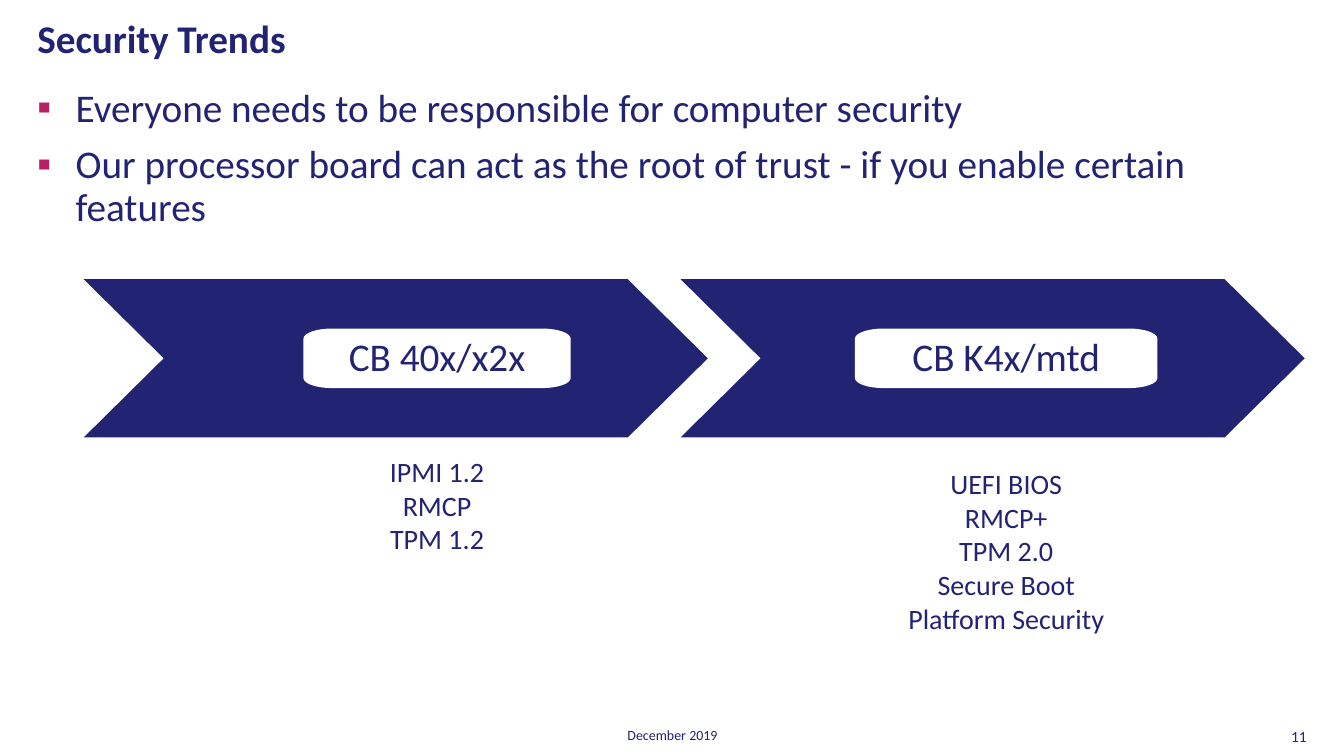
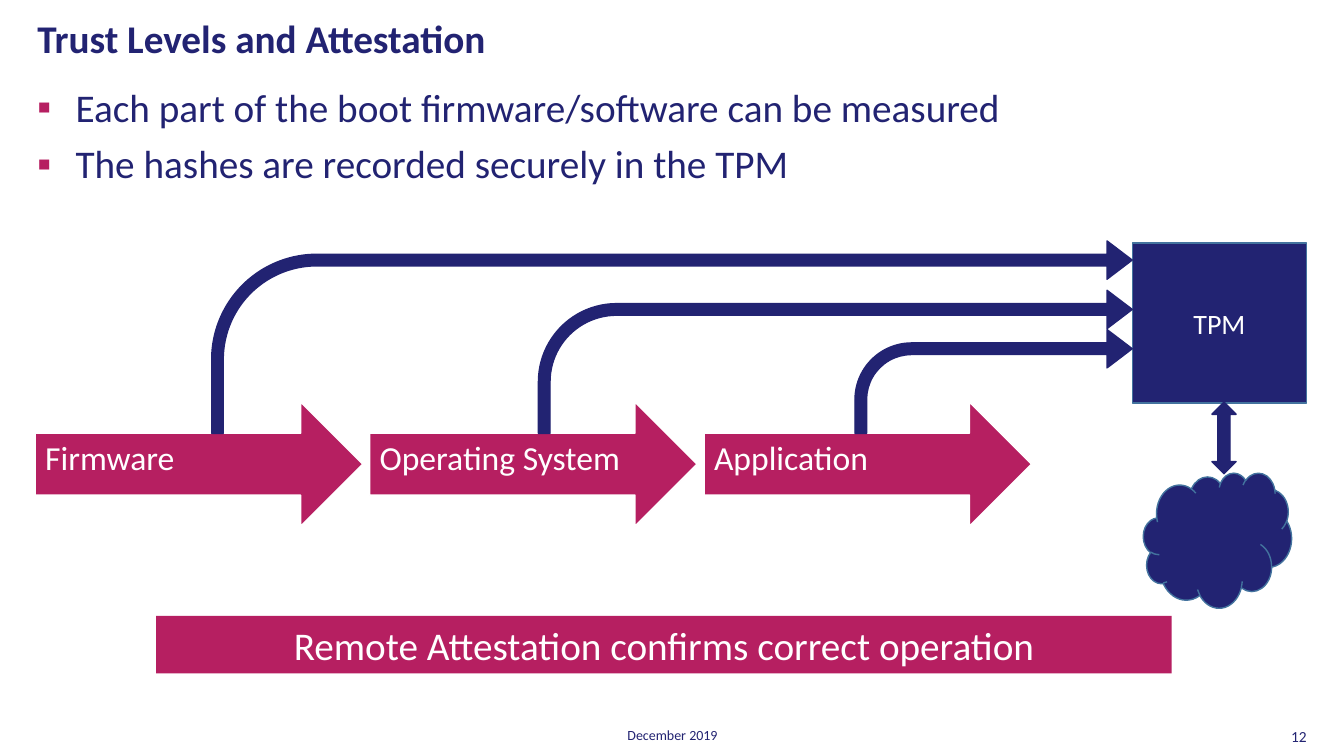
import math
from dataclasses import dataclass
from typing import NamedTuple

import pptx
import pptx.dml.color
import pptx.enum.shapes
import pptx.enum.text
import pptx.oxml.ns
import pptx.util
from lxml import etree

Inches = pptx.util.Inches
SHAPE = pptx.enum.shapes.MSO_SHAPE
ALIGN = pptx.enum.text.PP_ALIGN
ANCHOR = pptx.enum.text.MSO_ANCHOR


@dataclass(frozen=True)
class Theme:
    font: str = "Calibri"
    navy: str = "222372"
    magenta: str = "B61F61"
    white: str = "FFFFFF"
    outline: str = "43739E"
    heading: int = 28
    step: int = 24
    label: int = 20
    number: int = 11
    date: int = 10


class Box(NamedTuple):
    x: float
    y: float
    w: float
    h: float

    def inside(self, x, y, w, h):
        return Box(self.x + x, self.y + y, w, h)

    def emu(self):
        return [Inches(v) for v in self]


T = Theme()
PAGE = Box(0, 0, 13.33, 7.5)
INSETS = (0.1, 0.05, 0.1, 0.05)


def rgb(value):
    return pptx.dml.color.RGBColor.from_string(value)


def write(sp, lines, size, color=T.navy, align=ALIGN.LEFT, anchor=ANCHOR.TOP,
          insets=INSETS, bold=False, spacing=None):
    tf = sp.text_frame
    tf.word_wrap = True
    tf.vertical_anchor = anchor
    tf.margin_left, tf.margin_top, tf.margin_right, tf.margin_bottom = map(Inches, insets)
    tf.text = "\n".join(lines)
    for p in tf.paragraphs:
        p.alignment = align
        if spacing:
            p.line_spacing = spacing
        for r in p.runs:
            r.font.name = T.font
            r.font.size = pptx.util.Pt(size)
            r.font.bold = bold
            r.font.color.rgb = rgb(color)
    return tf


def add_text(s, box, lines, size, **style):
    return write(s.shapes.add_textbox(*box.emu()), lines, size, **style)


def paint(sp, fill, line=None):
    sp.shadow.inherit = False
    sp.fill.solid()
    sp.fill.fore_color.rgb = rgb(fill)
    if line:
        sp.line.color.rgb = rgb(line)
        sp.line.width = pptx.util.Pt(1)
    else:
        sp.line.fill.background()
    return sp


def add_shape(s, kind, box, fill=T.navy, line=None, adjustments=()):
    sp = paint(s.shapes.add_shape(kind, *box.emu()), fill, line)
    for i, value in enumerate(adjustments):
        sp.adjustments[i] = value
    return sp


def add_bullet(p):
    pPr = p._p.get_or_add_pPr()
    pPr.set("marL", str(Inches(0.38)))
    pPr.set("indent", str(-Inches(0.38)))
    qn = pptx.oxml.ns.qn
    color = etree.SubElement(pPr, qn("a:buClr"))
    etree.SubElement(color, qn("a:srgbClr")).set("val", T.magenta)
    etree.SubElement(pPr, qn("a:buFont")).set("typeface", T.font)
    etree.SubElement(pPr, qn("a:buChar")).set("char", "▪")


def add_frame(prs, number, title, bullets):
    s = prs.slides.add_slide(prs.slide_layouts[6])
    add_text(s, PAGE.inside(4.42, 7.16, 4.5, 0.23), ["December 2019"], T.date,
             align=ALIGN.CENTER)
    add_text(s, PAGE.inside(11.13, 7.16, 1.93, 0.23), [str(number)], T.number,
             align=ALIGN.RIGHT)
    tf = add_text(s, PAGE.inside(0.37, 0.84, 12.69, 1.24), bullets, T.heading,
                  insets=(0, 0.04, 0.1, 0.04), spacing=0.9)
    for i, p in enumerate(tf.paragraphs):
        add_bullet(p)
        if i:
            p.space_before = pptx.util.Pt(10)
    add_text(s, PAGE.inside(0.37, 0.17, 8.71, 0.46), [title], T.heading, bold=True,
             anchor=ANCHOR.MIDDLE, insets=(0, 0.05, 0.1, 0.05), spacing=0.9)
    return s


def add_pill(s, box, text):
    rx, ry = 0.28, 0.1
    corners = [(box.x + box.w - rx, box.y + box.h - ry), (box.x + rx, box.y + box.h - ry),
               (box.x + rx, box.y + ry), (box.x + box.w - rx, box.y + ry)]
    points = []
    for quarter, (cx, cy) in enumerate(corners):
        for step in range(9):
            angle = math.pi / 2 * (quarter + step / 8)
            points.append((Inches(cx + rx * math.cos(angle)),
                           Inches(cy + ry * math.sin(angle))))
    outline = s.shapes.build_freeform(*points[0])
    outline.add_line_segments(points[1:], close=True)
    sp = paint(outline.convert_to_shape(), T.white)
    write(sp, [text], T.heading, align=ALIGN.CENTER, anchor=ANCHOR.MIDDLE,
          insets=(0.19,) * 4, spacing=0.9)


def add_generation(s, box, name, pill_x, pill_w, features, features_y):
    add_shape(s, SHAPE.CHEVRON, box, adjustments=[0.506])
    add_pill(s, box.inside(pill_x, 0.49, pill_w, 0.59), name)
    width = 2.22
    add_text(s, box.inside(pill_x + (pill_w - width) / 2, features_y,
                           width, 0.1 + len(features) / 3),
             features, T.label, align=ALIGN.CENTER, anchor=ANCHOR.MIDDLE)


def add_steps(s, box, names):
    gap = 0.07
    w = (box.w - gap * (len(names) - 1)) / len(names)
    for i, name in enumerate(names):
        sp = add_shape(s, SHAPE.RIGHT_ARROW, box.inside(i * (w + gap), 0, w, box.h),
                       T.magenta, T.white, [0.5, 0.5])
        write(sp, [name], T.step, T.white, anchor=ANCHOR.MIDDLE,
              insets=(0.1, 0, 0.28, 0.09), spacing=0.9)


def add_measurements(s, box, starts):
    shaft, half_head, head = 0.115, 0.19, 0.25
    for x, y in starts:
        h = box.h - y
        add_shape(s, SHAPE.BENT_ARROW, box.inside(x, y, box.w - x, h), line=T.navy,
                  adjustments=[shaft / h, half_head / h, head / h, 0.546])


def add_tpm(s, box):
    sp = add_shape(s, SHAPE.RECTANGLE, box.inside(0, 0, box.w, 1.59), line=T.outline)
    write(sp, ["TPM"], T.label, T.white, align=ALIGN.CENTER, anchor=ANCHOR.MIDDLE,
          insets=(0.07, 0.04, 0.07, 0.04))
    add_shape(s, SHAPE.CLOUD, box.inside(0.11, 2.28, 1.47, 1.34), line=T.outline)
    add_shape(s, SHAPE.UP_DOWN_ARROW, box.inside(0.79, 1.58, 0.24, 0.71), line=T.navy)


def add_banner(s, box, text):
    sp = add_shape(s, SHAPE.RECTANGLE, box, T.magenta)
    write(sp, [text], T.heading, T.white, align=ALIGN.CENTER)


def build_trends(prs):
    s = add_frame(prs, 11, "Security Trends", [
        "Everyone needs to be responsible for computer security",
        "Our processor board can act as the root of trust - if you enable certain features",
    ])
    add_generation(s, PAGE.inside(0.83, 2.77, 6.19, 1.57), "CB 40x/x2x", 2.18, 2.65,
                   ["IPMI 1.2", "RMCP", "TPM 1.2"], 1.69)
    add_generation(s, PAGE.inside(6.75, 2.77, 6.19, 1.57), "CB K4x/mtd", 1.73, 3,
                   ["UEFI BIOS", "RMCP+", "TPM 2.0", "Secure Boot", "Platform Security"], 1.81)


def build_attestation(prs):
    s = add_frame(prs, 12, "Trust Levels and Attestation", [
        "Each part of the boot firmware/software can be measured",
        "The hashes are recorded securely in the TPM",
    ])
    add_steps(s, PAGE.inside(0.35, 3.99, 9.88, 1.23),
              ["Firmware", "Operating System", "Application"])
    add_tpm(s, PAGE.inside(11.23, 2.41, 1.73, 3.62))
    add_banner(s, PAGE.inside(1.55, 6.11, 10.07, 0.57),
               "Remote Attestation confirms correct operation")
    add_measurements(s, PAGE.inside(2.1, 2.39, 9.13, 1.91),
                     [(0, 0), (3.24, 0.49), (6.38, 0.88)])


def main():
    prs = pptx.Presentation()
    prs.slide_width, prs.slide_height = Inches(PAGE.w), Inches(PAGE.h)
    build_trends(prs)
    build_attestation(prs)
    prs.save("out.pptx")


if __name__ == "__main__":
    main()
